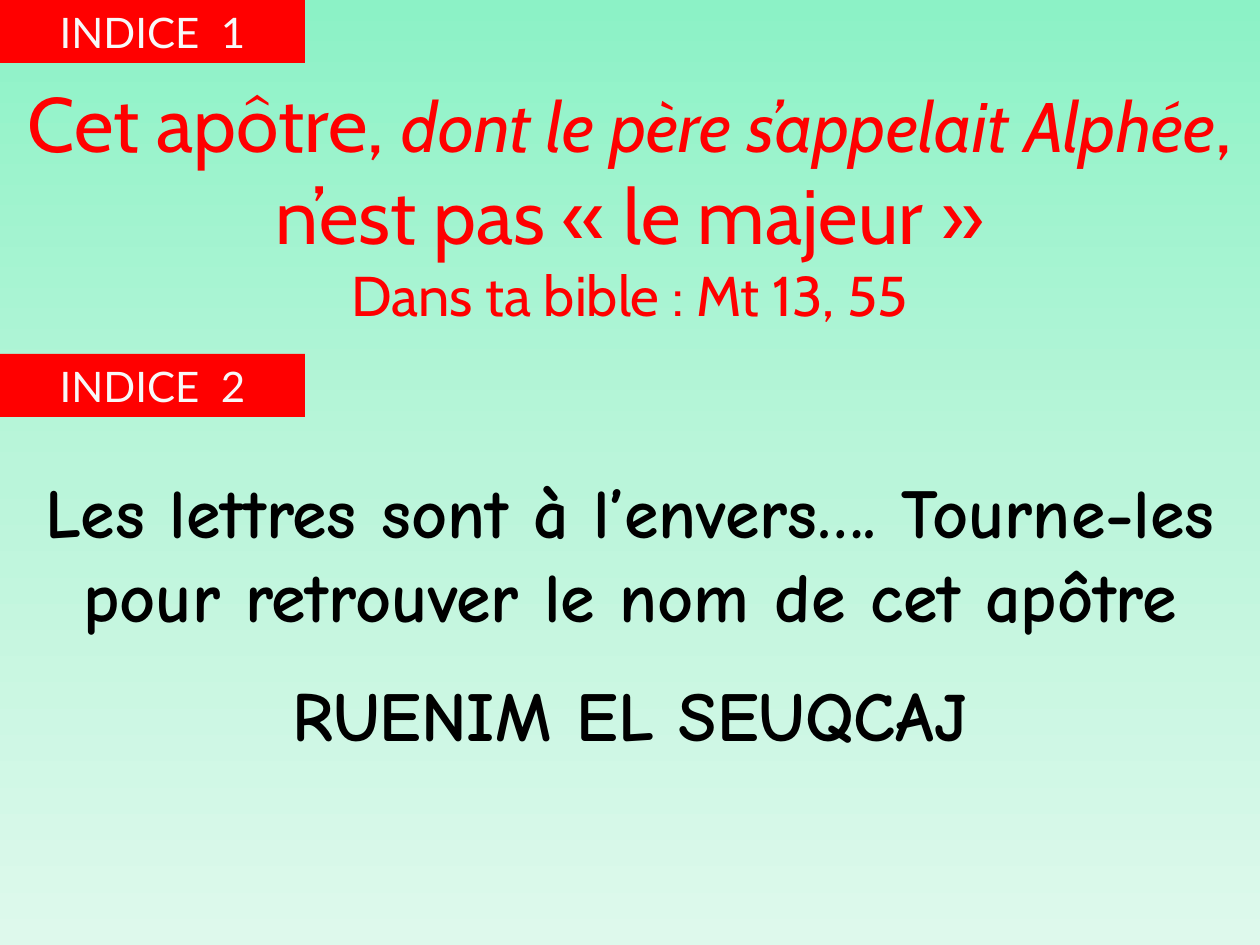
from copy import deepcopy
from dataclasses import dataclass

from pptx import Presentation
from pptx.dml.color import RGBColor as RGB
from pptx.enum.shapes import MSO_SHAPE as Shape
from pptx.enum.text import MSO_ANCHOR as Anchor, PP_ALIGN as Align
from pptx.util import Inches, Pt


@dataclass(frozen=True)
class Theme:
    red: str = "FF0000"
    black: str = "000000"
    off_white: str = "F8F8F8"
    background: tuple = ((0, "8CF2C6"), (0.5, "BAF5DA"), (1, "DEF9EC"))
    tag_size: int = 24
    reference_size: int = 32
    body_size: int = 40
    clue_size: int = 44
    paragraph_gap: int = 20


class ClueSlide:
    def __init__(self, presentation, theme):
        self.theme = theme
        self.slide = presentation.slides.add_slide(presentation.slide_layouts[6])

    def background(self):
        fill = self.slide.background.fill
        fill.gradient()
        fill.gradient_angle = 270
        stop_list = self.slide.element.xpath(".//p:bg//a:gsLst")[0]
        stop_list.append(deepcopy(stop_list[-1]))
        for stop, (position, color) in zip(fill.gradient_stops, self.theme.background):
            stop.position = position
            stop.color.rgb = RGB.from_string(color)

    def fill_text(self, frame, paragraphs, color, gap=0, **base):
        """Fill a frame with centred paragraphs, each a list of (text, font overrides)."""
        frame.word_wrap = True
        for index, runs in enumerate(paragraphs):
            paragraph = frame.add_paragraph() if index else frame.paragraphs[0]
            paragraph.alignment = Align.CENTER
            if index and gap:
                paragraph.space_before = Pt(gap)
            for text, overrides in runs:
                run = paragraph.add_run()
                run.text = text
                run.font.color.rgb = RGB.from_string(color)
                for name, value in {**base, **overrides}.items():
                    setattr(run.font, name, value)

    def tag(self, text, top):
        shape = self.slide.shapes.add_shape(
            Shape.RECTANGLE, 0, Inches(top), Inches(2.42), Inches(0.5))
        shape.shadow.inherit = False
        shape.fill.solid()
        shape.fill.fore_color.rgb = RGB.from_string(self.theme.red)
        shape.line.fill.background()
        shape.text_frame.vertical_anchor = Anchor.MIDDLE
        self.fill_text(shape.text_frame, [[(text, {})]], self.theme.off_white,
                       name="Lato", size=Pt(self.theme.tag_size))

    def text(self, top, height, paragraphs, color, **style):
        box = self.slide.shapes.add_textbox(0, Inches(top), Inches(10), Inches(height))
        self.fill_text(box.text_frame, paragraphs, color, **style)


def main():
    presentation = Presentation()
    presentation.slide_width, presentation.slide_height = Inches(10), Inches(7.5)
    theme = Theme()
    clues = ClueSlide(presentation, theme)
    clues.background()

    clues.text(0.55, 2.19, [
        [("Cet apôtre, ", {}),
         ("dont le père s’appelait Alphée", {"size": Pt(theme.body_size), "italic": True}),
         (", n’est pas « le majeur »", {})],
        [("Dans ta bible : Mt 13, 55", {"size": Pt(theme.reference_size)})],
    ], theme.red, name="Cabin", size=Pt(theme.clue_size))

    for number, top in enumerate((0, 2.81), start=1):
        clues.tag(f"INDICE  {number}", top)

    clues.text(3.67, 4.14, [
        [("Les lettres sont à l’envers…. Tourne-les pour retrouver le nom de cet apôtre", {})],
        [("RUENIM EL SEUQCAJ", {})],
    ], theme.black, gap=theme.paragraph_gap,
        name="Comic Neue", size=Pt(theme.body_size), bold=True)

    presentation.save("out.pptx")


if __name__ == "__main__":
    main()
